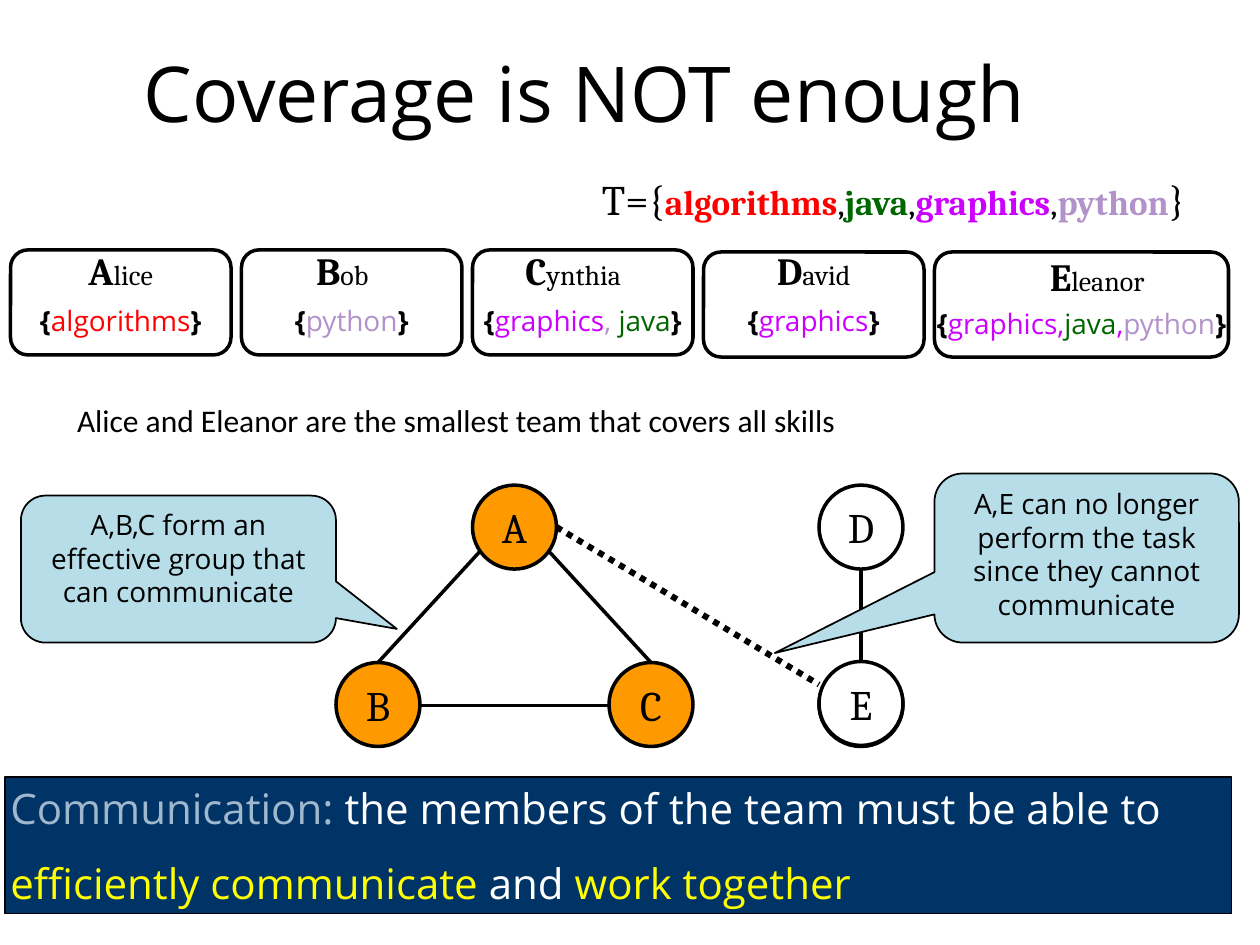
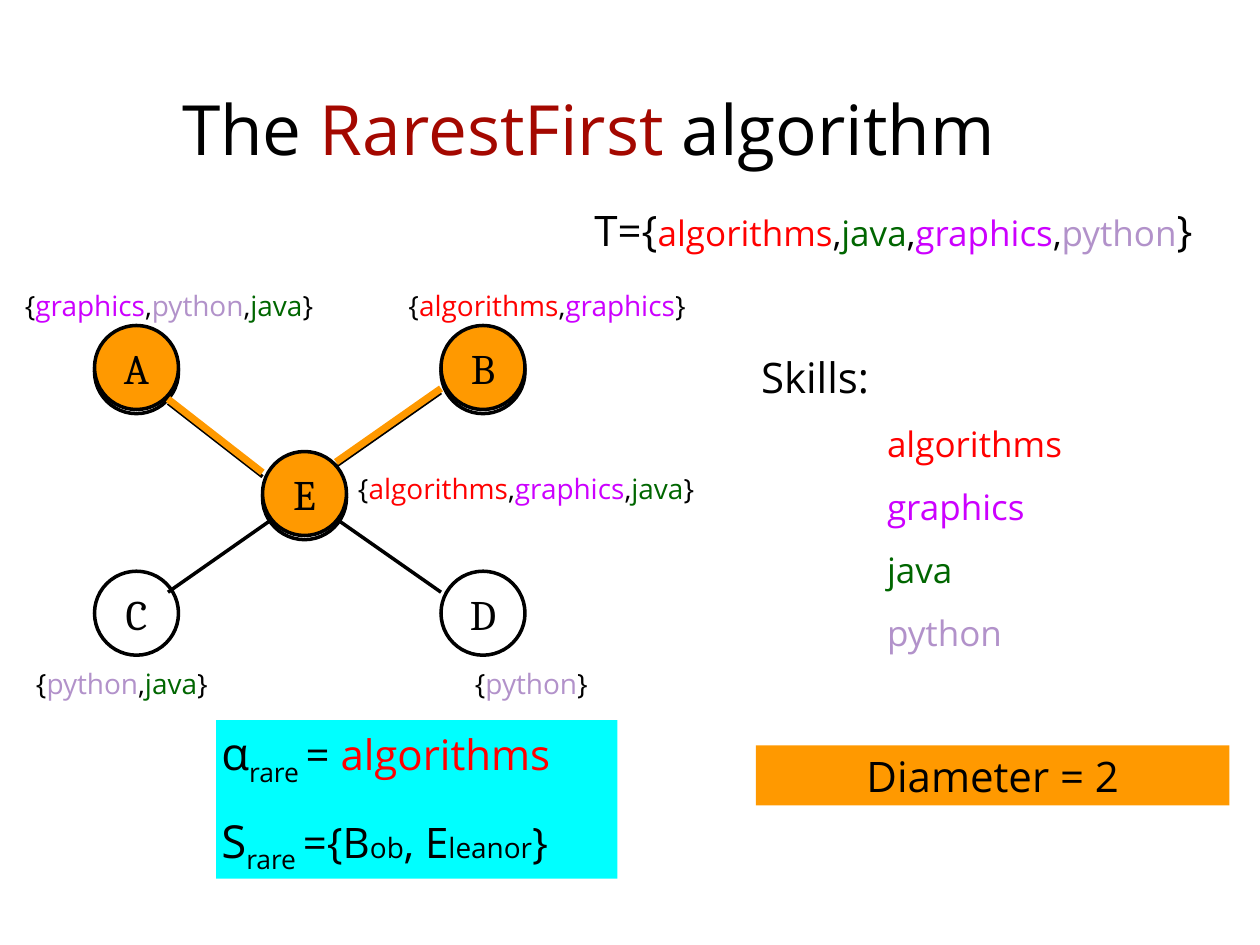
import pptx
import pptx.util
import pptx.dml.color
import pptx.enum.dml
import pptx.enum.shapes
import pptx.enum.text
import pptx.oxml.ns
import lxml.etree

SHAPE = pptx.enum.shapes.MSO_SHAPE
ALIGN = pptx.enum.text.PP_ALIGN
ANCHOR = pptx.enum.text.MSO_ANCHOR
BLACK, WHITE, YELLOW, ORANGE = "000000", "FFFFFF", "FFFF00", "FF9900"
NAVY, PALE_BLUE, CALLOUT, CYAN, DARK_RED = "003366", "9FB8CD", "B7DEE8", "00FFFF", "A40800"
SANS, SERIF, BODY = "Open Sans", "Cambria", "Calibri"
SKILLS = {"algorithms": "FF0000", "graphics": "CC00FF", "java": "006600", "python": "B292CA"}
COLS, ROWS = 120, 90
NODE = 8


def rgb(value):
    """Turn a hex string into a colour."""
    return pptx.dml.color.RGBColor.from_string(value)


def run(text, **fmt):
    """Pair a text with its full format."""
    return text, {"size": 16, "font": SANS, "color": BLACK, "bold": False, "base": 0, **fmt}


def skill_set(words, sep=",", seps=BLACK, bold=False, **fmt):
    """List coloured skills in braces."""
    runs = [run("{", bold=bold, **fmt)]
    for i, word in enumerate(words.split()):
        if i:
            runs.append(run(sep[min(i, len(sep)) - 1] if isinstance(sep, list) else sep, color=seps, **fmt))
        runs.append(run(word, color=SKILLS[word], **fmt))
    return runs + [run("}", bold=bold, **fmt)]


def task(font, bold):
    """Write the task as a set of all skills."""
    runs = [run("T={", size=24, font=font)]
    for i, word in enumerate(("algorithms", "java", "graphics", "python")):
        if i:
            runs.append(run(",", size=20, font=font))
        runs.append(run(word, size=20, font=font, bold=bold, color=SKILLS[word]))
    return runs + [run("}", size=24, font=font)]


class Deck:
    """Hold the style and the current slide on a grid of twelfths of an inch."""

    def __init__(self):
        """Start an empty deck."""
        self.prs = pptx.Presentation()
        self.prs.slide_width = pptx.util.Inches(10)
        self.prs.slide_height = pptx.util.Inches(7.5)

    def x(self, col):
        """Give the length of some columns."""
        return round(self.prs.slide_width * col / COLS)

    def y(self, row):
        """Give the length of some rows."""
        return round(self.prs.slide_height * row / ROWS)

    def box(self, col, row, width, height):
        """Give a frame on the grid."""
        return self.x(col), self.y(row), self.x(width), self.y(height)

    def slide(self, title, *frame):
        """Add a slide with its title."""
        self.s = self.prs.slides.add_slide(self.prs.slide_layouts[6])
        self.text(*frame, [title], anchor=ANCHOR.BOTTOM, inset=0.05, before=0)

    def fill_text(self, sp, paragraphs, align=ALIGN.CENTER, anchor=ANCHOR.TOP,
                  inset=0.04, before=None, wrap=True, indents=()):
        """Write paragraphs of runs into a shape."""
        tf = sp.text_frame
        tf.word_wrap = wrap
        tf.vertical_anchor = anchor
        tf.margin_left = tf.margin_right = tf.margin_top = tf.margin_bottom = pptx.util.Inches(inset)
        for i, runs in enumerate(paragraphs):
            p = tf.paragraphs[0] if i == 0 else tf.add_paragraph()
            p.alignment = align
            space = min(0.6 * runs[0][1]["size"], 14.4) if before is None else before
            p.space_before = pptx.util.Pt(space)
            if i in indents:
                p._p.get_or_add_pPr().set("marL", str(pptx.util.Inches(1)))
            for text, fmt in runs:
                r = p.add_run()
                r.text = text
                r.font.size = pptx.util.Pt(fmt["size"])
                r.font.name = fmt["font"]
                r.font.bold = fmt["bold"]
                r.font.color.rgb = rgb(fmt["color"])
                if fmt["base"]:
                    r._r.get_or_add_rPr().set("baseline", str(fmt["base"] * 1000))

    def text(self, col, row, width, height, paragraphs, **layout):
        """Add a text box."""
        self.fill_text(self.s.shapes.add_textbox(*self.box(col, row, width, height)), paragraphs, **layout)

    def shape(self, kind, col, row, width, height, fill=None, line=None, paragraphs=(), **layout):
        """Add a preset shape with optional text."""
        sp = self.s.shapes.add_shape(kind, *self.box(col, row, width, height))
        sp.shadow.inherit = False
        if fill:
            sp.fill.solid()
            sp.fill.fore_color.rgb = rgb(fill)
        else:
            sp.fill.background()
        if line:
            sp.line.color.rgb = rgb(BLACK)
            sp.line.width = pptx.util.Pt(line)
        else:
            sp.line.fill.background()
        if paragraphs:
            self.fill_text(sp, paragraphs, **layout)
        return sp

    def node(self, letter, col, row, fill=None):
        """Add a round graph node."""
        label = [[run(letter, size=24, font=SERIF)]] if letter else ()
        self.shape(SHAPE.OVAL, col, row, NODE, NODE, fill, 2, label,
                   anchor=ANCHOR.MIDDLE, wrap=False, before=0)

    def edge(self, x1, y1, x2, y2, color=BLACK, width=2, dotted=False):
        """Add a graph edge."""
        line = self.s.shapes.add_connector(pptx.enum.shapes.MSO_CONNECTOR.STRAIGHT,
                                           self.x(x1), self.y(y1), self.x(x2), self.y(y2))
        line.line.color.rgb = rgb(color)
        line.line.width = pptx.util.Pt(width)
        if dotted:
            line.line.dash_style = pptx.enum.dml.MSO_LINE.ROUND_DOT
        lxml.etree.SubElement(line._element.spPr, pptx.oxml.ns.qn("a:effectLst"))

    def callout(self, col, row, width, height, tip, text):
        """Add a speech bubble that points at a tip."""
        sp = self.shape(SHAPE.ROUNDED_RECTANGULAR_CALLOUT, col, row, width, height,
                        CALLOUT, 1, [[run(text)]])
        sp.adjustments[0] = (tip[0] - col) / width - 0.5
        sp.adjustments[1] = (tip[1] - row) / height - 0.5

    def card(self, col, row, width, name, shift, skills, skill_width):
        """Add a person's card with name and skills."""
        self.shape(SHAPE.ROUNDED_RECTANGLE, col, row, width, 10, line=2)
        middle = col + width / 2
        initial = run(name[0], size=22, font=SERIF, bold=True)
        name_row = 23.6 if name == "Eleanor" else 23
        self.text(middle + shift - 9.6, name_row, 19.2, 5.9, [[initial, run(name[1:], font=SERIF)]])
        self.text(middle - skill_width / 2, name_row / 2 + 16.9, skill_width, 4, [skills])


def coverage(deck):
    """Build the slide on coverage and communication."""
    deck.slide([run("Coverage is NOT enough", size=44)], 3.7, 0.7, 104, 13)
    deck.shape(SHAPE.RECTANGLE, 0.5, 74, 116.8, 13, NAVY, 1, [
        [run("Communication: ", size=24, color=PALE_BLUE),
         run("the members of the team must be able to", size=24, color=WHITE)],
        [run("efficiently communicate", size=24, color=YELLOW), run(" and ", size=24, color=WHITE),
         run("work together", size=24, color=YELLOW)],
    ], align=ALIGN.LEFT, anchor=ANCHOR.MIDDLE)
    people = [
        ("Alice", 0, skill_set("algorithms", bold=True), 19.2),
        ("Bob", -0.9, skill_set("python", bold=True), 19.2),
        ("Cynthia", -0.9, skill_set("graphics java", ", ", SKILLS["python"], True), 23.2),
        ("David", 0, skill_set("graphics", bold=True), 19.2),
        ("Eleanor", 1.5, skill_set("graphics java python", ",", SKILLS["graphics"], True), 32.2),
    ]
    for i, person in enumerate(people):
        deck.card(1 + 22 * i, 23.8 if i < 3 else 24, 21 if i < 4 else 28, *person)
    for ends in ((40, 67.2, 58, 67.2), (36, 63.1, 46, 52.2), (52, 52.2, 62, 63.1)):
        deck.edge(*ends)
    deck.node("", 78, 63.1)
    deck.node("D", 78, 46.2)
    deck.edge(82, 63.1, 82, 54.1)
    deck.text(53, 16, 64.2, 5.9, [task(SERIF, True)])
    for letter, col, row in (("A", 45, 46.2), ("C", 58, 63.1), ("B", 32, 63.1)):
        deck.node(letter, col, row, ORANGE)
    deck.edge(53, 50.2, 78, 65.2, width=3.5, dotted=True)
    deck.callout(89, 45.1, 29, 16.1, (73.8, 62.2),
                 "A,E can no longer perform the task since they cannot communicate")
    deck.callout(2, 47.2, 30, 14, (37.8, 59.9), "A,B,C form an effective group that can communicate")
    deck.text(6.5, 37.4, 78, 4.8, [[
        run("Alice and Eleanor are the smallest team that covers all skills", size=18, font=BODY)]],
        align=ALIGN.LEFT, inset=0.07, before=0)
    deck.node("E", 78, 63, WHITE)


def rarest_first(deck):
    """Build the slide on the algorithm."""
    deck.slide([run("The ", size=39.6), run("RarestFirst", size=39.6, color=DARK_RED),
                run(" algorithm", size=39.6)], 2, 8, 108.1, 8.7)
    team = {"A": (9, 31), "B": (42, 31), "E": (25, 43)}
    for col, row in team.values():
        deck.node("", col, row + 0.4)
    for letter, col in (("C", 9), ("D", 42)):
        deck.node(letter, col, 54.4)
    paths = ((32, 44, 42, 37), (16, 38, 25, 45))
    for x1, y1, x2, y2 in paths + ((16, 56, 26, 49), (32, 49, 42, 56)):
        deck.edge(x1, y1 + 0.4, x2, y2 + 0.4)
    deck.text(53, 19, 64.2, 5.6, [task(SANS, False)])
    labels = ((0, 27, 32.2, "graphics python java"), (36, 27, 32.2, "algorithms graphics"),
              (31, 44.4, 38.2, "algorithms graphics java"), (-3, 63, 29.2, "python java"),
              (36, 63, 29.2, "python"))
    for col, row, width, words in labels:
        deck.text(col, row, width, 4, [skill_set(words)])
    rare = run("rare ", size=26, base=-25)
    deck.shape(SHAPE.RECTANGLE, 20.6, 68.6, 38.2, 15.1, CYAN, paragraphs=[
        [run("α", size=26), rare, run("= ", size=24),
         run("algorithms", size=24, color=SKILLS["algorithms"])],
        [run("S", size=26), rare, run("={B", size=24), run("ob"), run(", E", size=24),
         run("leanor"), run("}", size=24)],
    ], align=ALIGN.LEFT)
    for letter in "BE":
        deck.node(letter, *team[letter], ORANGE)
    for ends in paths:
        deck.edge(*ends, color=ORANGE, width=4)
    deck.node("A", *team["A"], ORANGE)
    skills = [[run(word, size=20, color=color)] for word, color in SKILLS.items()]
    deck.text(72, 33, 45.1, 29, [[run("Skills:", size=24)]] + skills,
              align=ALIGN.LEFT, indents=range(1, 5))
    deck.shape(SHAPE.RECTANGLE, 72, 71, 45.1, 5.7, ORANGE, paragraphs=[[run("Diameter = 2", size=24)]])


def main():
    """Build and save the deck."""
    deck = Deck()
    coverage(deck)
    rarest_first(deck)
    deck.prs.save("out.pptx")


if __name__ == "__main__":
    main()
